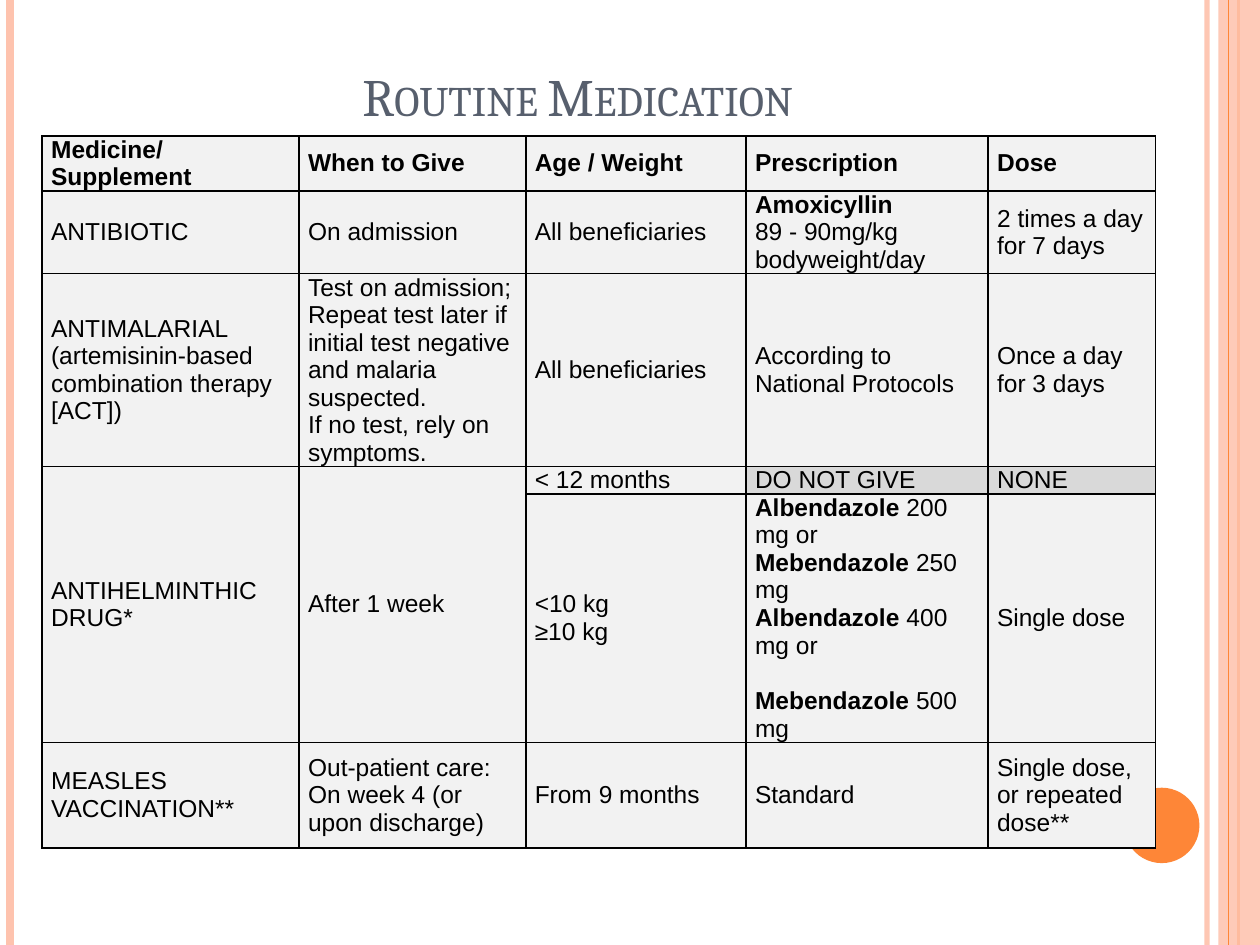
from lxml import etree
from pptx import Presentation
from pptx.dml.color import RGBColor
from pptx.enum import shapes, text
from pptx.oxml.ns import qn
from pptx.util import Cm, Pt

BLACK = RGBColor(0x00, 0x00, 0x00)
SLATE = RGBColor(0x57, 0x5F, 0x6D)
PEACH = RGBColor(0xFE, 0xC3, 0xAE)
ORANGE = RGBColor(0xFE, 0x86, 0x37)
LIGHT = RGBColor(0xF2, 0xF2, 0xF2)
GREY = RGBColor(0xD9, 0xD9, 0xD9)

DRUGS = ("Amoxicyllin", "Albendazole", "Mebendazole")
COL_WIDTHS = (5.18, 4.57, 4.44, 4.88, 3.37)
ROW_HEIGHTS = (1.07, 1.6, 3.73, 0.53, 4.27, 2.13)
ROWS = (
    ("Medicine/Supplement", "When to Give", "Age / Weight", "Prescription", "Dose"),
    ("ANTIBIOTIC", "On admission", "All beneficiaries",
     "Amoxicyllin\n89 - 90mg/kg bodyweight/day", "2 times a day for 7 days"),
    ("ANTIMALARIAL\n(artemisinin-based combination therapy [ACT])",
     "Test on admission;\nRepeat test later if initial test negative and malaria "
     "suspected.\nIf no test, rely on symptoms.",
     "All beneficiaries", "According to National Protocols",
     "Once a day\nfor 3 days"),
    ("ANTIHELMINTHIC DRUG*", "After 1 week", "< 12 months", "DO NOT GIVE", "NONE"),
    ("", "", "<10 kg\n≥10 kg",
     "Albendazole 200 mg or\nMebendazole 250 mg\n"
     "Albendazole 400 mg or\nMebendazole 500 mg", "Single dose"),
    ("MEASLES VACCINATION**", "Out-patient care: On week 4 (or upon discharge)",
     "From 9 months", "Standard", "Single dose, or repeated dose**"),
)


def set_opacity(sp, percent):
    """Apply an opacity to the first colour of the shape."""
    color = next(sp._element.spPr.iter(qn("a:srgbClr")))
    etree.SubElement(color, qn("a:alpha"), val=str(percent * 1000))


def add_rule(s, x, top, height, color, width):
    """Draw a vertical line."""
    line = s.shapes.add_connector(shapes.MSO_CONNECTOR.STRAIGHT,
                                  x, top, x, top + height)
    line.line.color.rgb = color
    line.line.width = Pt(width)
    etree.SubElement(line._element.spPr, qn("a:effectLst"))
    return line


def add_plain_shape(s, kind, box, color):
    sp = s.shapes.add_shape(kind, *box)
    sp.shadow.inherit = False
    sp.fill.solid()
    sp.fill.fore_color.rgb = color
    sp.line.fill.background()
    return sp


def add_frame(s, left, top, width, height):
    """Draw the side stripes and the circle around the content."""
    right = left + width
    set_opacity(add_rule(s, right - Cm(1.07), top, height, PEACH, 3), 93)
    add_rule(s, left + Cm(0.2), top, height, PEACH, 4.5)
    add_rule(s, right - Cm(0.43), top, height, ORANGE, 1.5)
    band = add_plain_shape(s, shapes.MSO_SHAPE.RECTANGLE,
                           (right - Cm(0.84), top, Cm(0.84), height), PEACH)
    set_opacity(band, 87)
    add_rule(s, right - Cm(0.64), top, height, ORANGE, 0.75)
    add_plain_shape(s, shapes.MSO_SHAPE.OVAL,
                    (right - Cm(2.74), top + Cm(15.88), Cm(1.52), Cm(1.52)), ORANGE)


def add_title(s, left, top, width, height):
    title = s.shapes.title
    title.left, title.top, title.width, title.height = left, top, width, height
    tf = title.text_frame
    tf.text = "Routine Medication"
    tf.vertical_anchor = text.MSO_ANCHOR.BOTTOM
    tf.margin_bottom = Cm(1.37)
    p = tf.paragraphs[0]
    p.alignment = text.PP_ALIGN.CENTER
    r = p.runs[0]
    r.font.name, r.font.size = "Cambria", Pt(30)
    r.font.color.rgb = SLATE
    r.font._element.set("cap", "small")


def add_borders(cell):
    tcPr = cell._tc.get_or_add_tcPr()
    for side in ("a:lnL", "a:lnR", "a:lnT", "a:lnB"):
        ln = etree.SubElement(tcPr, qn(side), w=str(Pt(1)))
        fill = etree.SubElement(ln, qn("a:solidFill"))
        etree.SubElement(fill, qn("a:srgbClr"), val=str(BLACK))


def write_paragraph(p, words, header):
    """Write one line, with a leading drug name in bold."""
    drug = next((name for name in DRUGS if words.startswith(name)), "")
    if header:
        p.alignment = text.PP_ALIGN.JUSTIFY
    for part, bold in ((drug, True), (words[len(drug):], header)):
        if part:
            r = p.add_run()
            r.text = part
            r.font.name, r.font.size, r.font.bold = "Arial", Pt(14), bold
            r.font.color.rgb = BLACK


def fill_cell(cell, words, header):
    cell.vertical_anchor = text.MSO_ANCHOR.MIDDLE
    cell.margin_left = cell.margin_right = Cm(0.18)
    cell.margin_top = cell.margin_bottom = 0
    add_borders(cell)
    cell.fill.solid()
    cell.fill.fore_color.rgb = GREY if words in ("DO NOT GIVE", "NONE") else LIGHT
    tf = cell.text_frame
    for i, line in enumerate(words.split("\n")):
        p = tf.add_paragraph() if i else tf.paragraphs[0]
        write_paragraph(p, line, header)


def add_medication_table(s, left, top, width, height):
    frame = s.shapes.add_table(len(ROWS), len(COL_WIDTHS), left, top, width, height)
    table = frame.table
    table.first_row = table.horz_banding = False
    for column, size in zip(table.columns, COL_WIDTHS):
        column.width = Cm(size)
    for row, size in zip(table.rows, ROW_HEIGHTS):
        row.height = Cm(size)
    for i, row in enumerate(ROWS):
        for j, words in enumerate(row):
            fill_cell(table.cell(i, j), words, header=i == 0)
    for j in (0, 1):
        table.cell(3, j).merge(table.cell(4, j))
    table.cell(4, 3).text_frame.paragraphs[-1].space_before = Pt(16)
    frame.height = height


def main():
    prs = Presentation()
    prs.slide_width, prs.slide_height = Cm(25.4), Cm(19.05)
    s = prs.slides.add_slide(prs.slide_layouts[5])
    add_frame(s, 0, 0, prs.slide_width, prs.slide_height)
    add_title(s, Cm(1.27), Cm(0.76), Cm(20.75), Cm(3.18))
    add_medication_table(s, Cm(0.85), Cm(2.74), Cm(22.44), Cm(15.16))
    prs.save("out.pptx")


if __name__ == "__main__":
    main()
